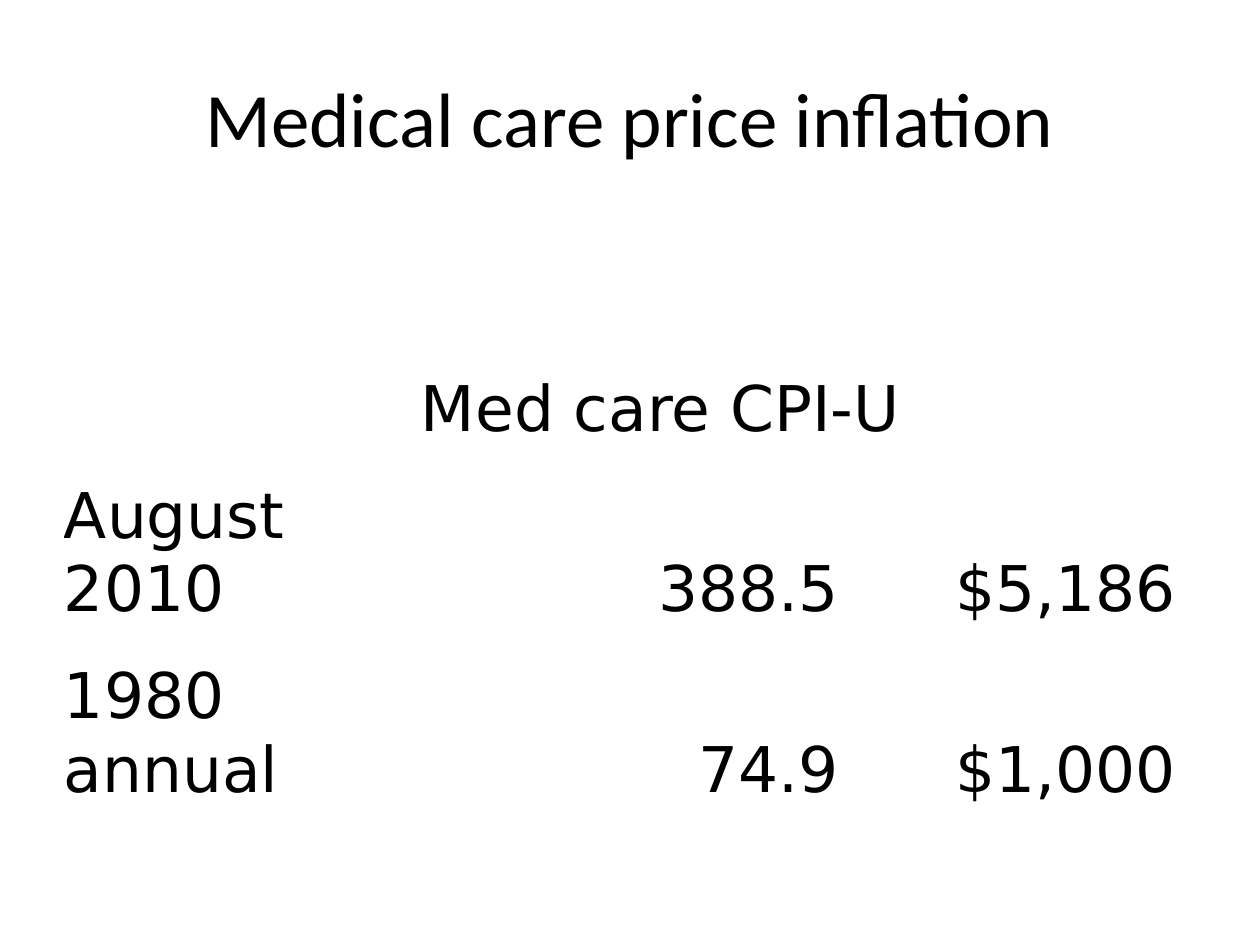
from pptx import Presentation
from pptx.dml.color import RGBColor
from pptx.enum.text import MSO_ANCHOR, PP_ALIGN
from pptx.util import Pt

PX = 914400 / 126
BLACK = RGBColor(0, 0, 0)
LEFT, RIGHT, CENTER = PP_ALIGN.LEFT, PP_ALIGN.RIGHT, PP_ALIGN.CENTER
MIDDLE, BOTTOM = MSO_ANCHOR.MIDDLE, MSO_ANCHOR.BOTTOM

TITLE_FONT = {"name": "Calibri", "size": Pt(44), "bold": False}
TABLE_FONT = {"name": "DejaVu Sans", "size": Pt(36), "bold": False}
COLUMN_WIDTHS = (357, 420, 357)
COLUMN_ALIGNS = (LEFT, RIGHT, RIGHT)
HEADING = "Med care CPI-U"
ROWS = (
    ("August 2010", "388.5", "$5,186 "),
    ("1980 annual", "74.9", "$1,000 "),
)


def px(n):
    return round(n * PX)


def set_attrs(obj, values):
    for name, value in values.items():
        setattr(obj, name, value)


def write(tf, text, font, align):
    p = tf.paragraphs[0]
    p.alignment = align
    r = p.add_run()
    r.text = text
    set_attrs(r.font, font)
    r.font.color.rgb = BLACK


def add_title(s, x, y, w, h):
    sp = s.shapes.title
    set_attrs(sp, {"left": px(x), "top": px(y), "width": px(w), "height": px(h)})
    sp.text_frame.vertical_anchor = MIDDLE
    write(sp.text_frame, "Medical care price inflation", TITLE_FONT, CENTER)


def add_price_table(s, x, y, w, h):
    n_rows = len(ROWS) + 1
    table = s.shapes.add_table(
        n_rows, len(COLUMN_WIDTHS), px(x), px(y), px(w), px(h)
    ).table
    set_attrs(table, {"first_row": False, "horz_banding": False})
    for column, width in zip(table.columns, COLUMN_WIDTHS):
        column.width = px(w * width / sum(COLUMN_WIDTHS))
    for row in table.rows:
        row.height = px(h / n_rows)
    cell_format = {
        "vertical_anchor": BOTTOM,
        "margin_left": px(1),
        "margin_right": px(1),
        "margin_top": px(1),
        "margin_bottom": 0,
    }
    for cell in table.iter_cells():
        cell.fill.background()
        set_attrs(cell, cell_format)

    table.cell(0, 1).merge(table.cell(0, 2))
    write(table.cell(0, 1).text_frame, HEADING, TABLE_FONT, LEFT)
    for i, values in enumerate(ROWS, start=1):
        for j, (text, align) in enumerate(zip(values, COLUMN_ALIGNS)):
            write(table.cell(i, j).text_frame, text, TABLE_FONT, align)


def main():
    prs = Presentation()
    set_attrs(prs, {"slide_width": px(1260), "slide_height": px(945)})
    s = prs.slides.add_slide(prs.slide_layouts[5])
    add_title(s, 63, 38, 1134, 157)
    add_price_table(s, 63, 266, 1134, 541)
    prs.save("out.pptx")


if __name__ == "__main__":
    main()
